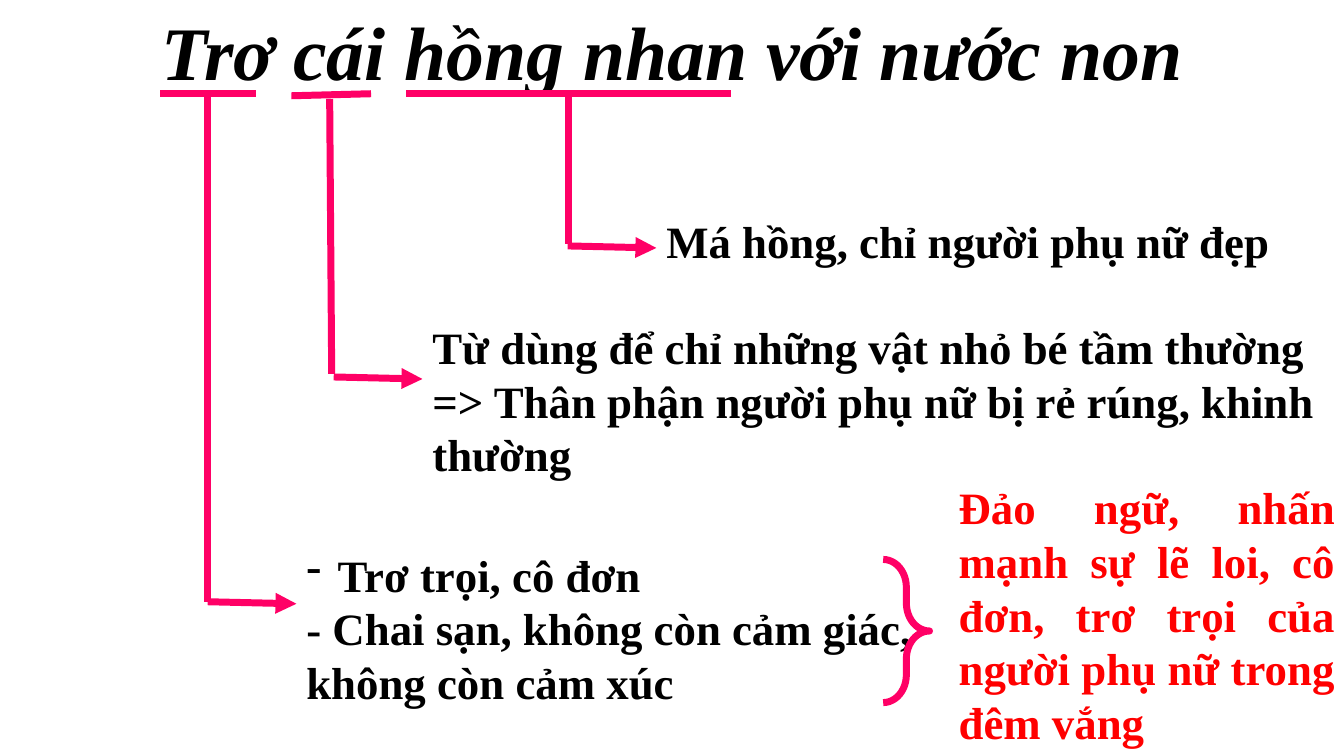
from lxml import etree
from pptx import Presentation
from pptx import util as u
from pptx.dml.color import RGBColor
from pptx.enum import shapes, text
from pptx.oxml.ns import qn

WIDTH, HEIGHT = 13.33, 7.5
FONT = "Times New Roman"
PINK, RED, BLACK = "FF0066", "FF0000", "000000"
LINE_WIDTH = 5
ARROW_RUN, ARROW_DROP = 0.88, 0.02

VERSE = "Trơ cái hồng nhan với nước non"
BRANCHES = [
    {
        "underline": (4.03, 0.93, 7.25, 0.93),
        "stem": (5.64, 0.95, 5.64, 2.42),
        "arrow_top": 2.44,
        "note": (6.51, 2.07, 6.68, 0.64),
        "lines": [("", "Má hồng, chỉ người phụ nữ đẹp")],
    },
    {
        "underline": (2.89, 0.95, 3.68, 0.93),
        "stem": (3.27, 0.98, 3.29, 3.71),
        "arrow_top": 3.74,
        "note": (4.19, 3.12, 9.15, 1.72),
        "lines": [
            ("", "Từ dùng để chỉ những vật nhỏ bé tầm thường"),
            ("", "=> Thân phận người phụ nữ bị rẻ rúng, khinh thường"),
        ],
    },
    {
        "underline": (1.59, 0.93, 2.54, 0.93),
        "stem": (2.06, 0.94, 2.06, 5.97),
        "arrow_top": 5.97,
        "note": (2.94, 5.38, 6.27, 1.72),
        "lines": [
            ("-", "Trơ trọi, cô đơn"),
            ("", "- Chai sạn, không còn cảm giác, không còn cảm xúc"),
        ],
    },
]
BRACE = (8.76, 5.55, 0.46, 1.42)
CONCLUSION = (9.41, 4.71, 3.93, 2.79)
CONCLUSION_LINES = [
    ("", "Đảo ngữ, nhấn mạnh sự lẽ loi, cô đơn, trơ trọi của người phụ nữ trong đêm vắng")
]


def inches(values):
    return [u.Inches(value) for value in values]


def color(hex_code):
    return RGBColor.from_string(hex_code)


def add_run(para, words, size, hex_code, italic=False):
    span = para.add_run()
    span.text = words
    span.font.name = FONT
    span.font.size = u.Pt(size)
    span.font.bold = True
    span.font.italic = italic
    span.font.color.rgb = color(hex_code)


def add_bullet(para, mark):
    props = para._p.get_or_add_pPr()
    indent = u.Inches(0.31)
    props.set("marL", str(indent))
    props.set("indent", str(-indent))
    etree.SubElement(props, qn("a:buChar")).set("char", mark)


def add_note(page, area, lines, hex_code=BLACK, align=text.PP_ALIGN.LEFT):
    frame = page.shapes.add_textbox(*inches(area)).text_frame
    frame.word_wrap = True
    frame.auto_size = text.MSO_AUTO_SIZE.SHAPE_TO_FIT_TEXT
    for index, (mark, words) in enumerate(lines):
        para = frame.add_paragraph() if index else frame.paragraphs[0]
        para.alignment = align
        if mark:
            add_bullet(para, mark)
        add_run(para, words, 32, hex_code)


def style_line(line):
    line.color.rgb = color(PINK)
    line.width = u.Pt(LINE_WIDTH)


def add_line(page, ends, arrow=False):
    link = page.shapes.add_connector(shapes.MSO_CONNECTOR.STRAIGHT, *inches(ends))
    style_line(link.line)
    if arrow:
        etree.SubElement(link.line._get_or_add_ln(), qn("a:tailEnd")).set("type", "triangle")
    etree.SubElement(link._element.spPr, qn("a:effectLst"))


def add_verse(page):
    title = page.shapes.title
    title.left, title.top, title.width, title.height = inches((0, 0, WIDTH, HEIGHT))
    frame = title.text_frame
    frame.word_wrap = True
    frame.auto_size = text.MSO_AUTO_SIZE.NONE
    frame.vertical_anchor = text.MSO_ANCHOR.TOP
    para = frame.paragraphs[0]
    para.alignment = text.PP_ALIGN.CENTER
    para.space_before = u.Pt(6.4)
    add_run(para, VERSE, 54, BLACK, italic=True)


def add_branch(page, branch):
    add_line(page, branch["underline"])
    add_line(page, branch["stem"])
    left, top = branch["note"][0], branch["arrow_top"]
    add_line(page, (left - ARROW_RUN, top, left, top + ARROW_DROP), arrow=True)
    add_note(page, branch["note"], branch["lines"])


def add_brace(page):
    brace = page.shapes.add_shape(shapes.MSO_SHAPE.RIGHT_BRACE, *inches(BRACE))
    brace.adjustments[0] = 0.6
    brace.adjustments[1] = 0.5
    brace.shadow.inherit = False
    brace.fill.background()
    style_line(brace.line)


def main():
    deck = Presentation()
    deck.slide_width, deck.slide_height = inches((WIDTH, HEIGHT))
    page = deck.slides.add_slide(deck.slide_layouts.get_by_name("Title Only"))
    add_verse(page)
    for branch in BRANCHES:
        add_branch(page, branch)
    add_brace(page)
    add_note(page, CONCLUSION, CONCLUSION_LINES, RED, text.PP_ALIGN.JUSTIFY)
    deck.save("out.pptx")


if __name__ == "__main__":
    main()
